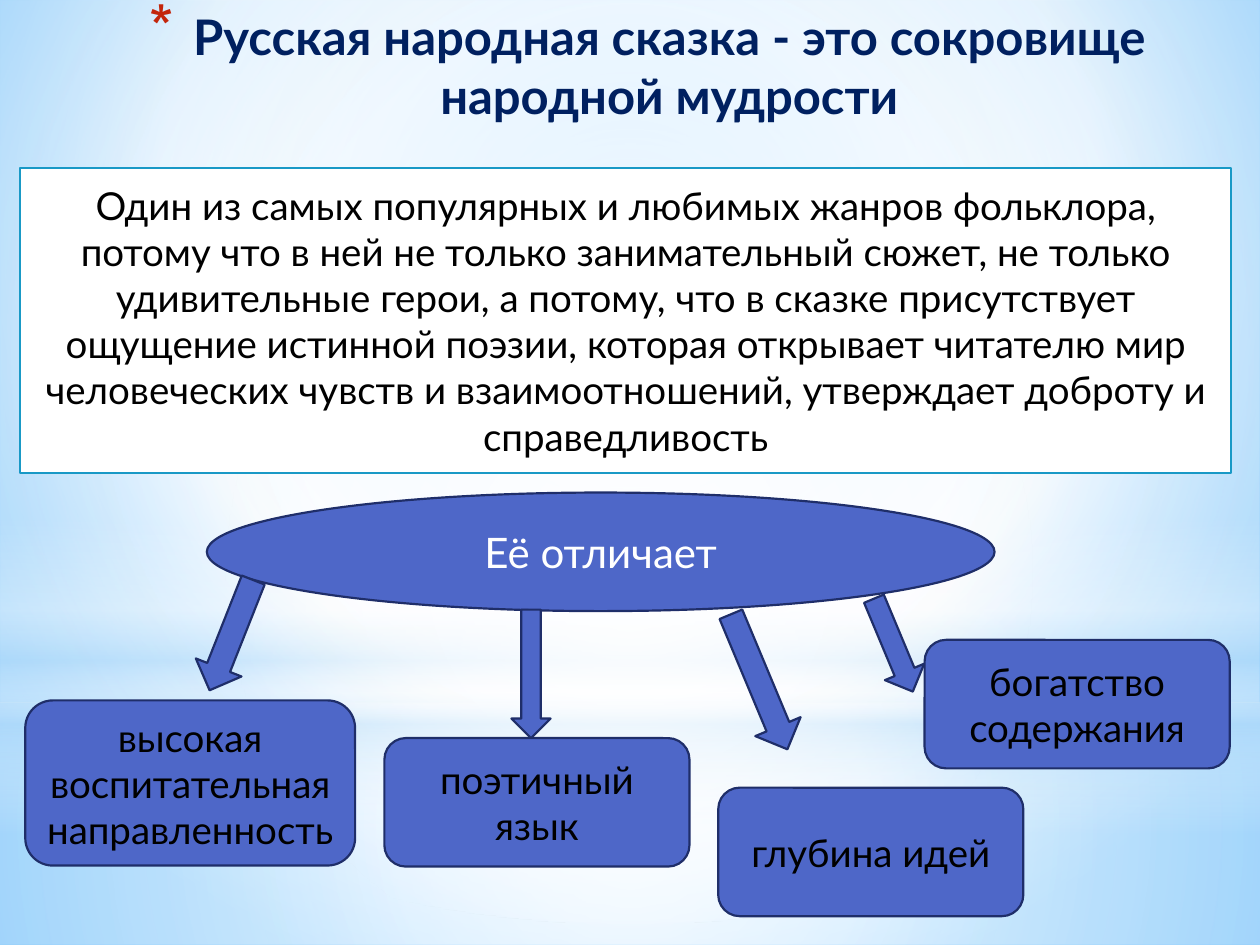
"""Build a slide about what distinguishes the Russian folk tale."""
import dataclasses

import lxml.etree
import pptx
import pptx.dml.color
import pptx.enum.shapes
import pptx.enum.text
import pptx.oxml
import pptx.oxml.ns
import pptx.util

Cm = pptx.util.Cm
SHAPE = pptx.enum.shapes.MSO_SHAPE
CENTER = (50, 50, 50, 50)


@dataclasses.dataclass(frozen=True)
class Theme:
    font: str = "Lato"
    title: str = "002060"
    star: str = "C3260C"
    accent: str = "4E67C8"
    accent_edge: str = "1F2E69"
    panel: str = "FFFFFF"
    panel_edge: str = "1999C6"
    dark: str = "000000"
    light: str = "FFFFFF"
    haze: str = "B4DCFA"
    sky: str = "9ED5FF"
    deep_sky: str = "5BB9FF"
    title_size: int = 28
    hub_size: int = 24
    body_size: int = 22
    edge_width: float = 1.25


def rgb(value):
    return pptx.dml.color.RGBColor.from_string(value)


def gradient(stops, focus=None):
    marks = "".join(
        f'<a:gs pos="{pos * 1000}"><a:srgbClr val="{color}">'
        f'<a:alpha val="{alpha * 1000}"/></a:srgbClr></a:gs>'
        for pos, color, alpha in stops)
    course = '<a:lin ang="5400000" scaled="0"/>'
    if focus:
        sides = " ".join(f'{side}="{part * 1000}"' for side, part in zip("ltrb", focus))
        course = f'<a:path path="circle"><a:fillToRect {sides}/></a:path>'
    return pptx.oxml.parse_xml(
        f'<a:gradFill {pptx.oxml.ns.nsdecls("a")} rotWithShape="1">'
        f'<a:gsLst>{marks}</a:gsLst>{course}</a:gradFill>')


def swap_fill(fill, holder, new_fill):
    fill.solid()
    solid = holder.find(pptx.oxml.ns.qn("a:solidFill"))
    holder.replace(solid, new_fill)


class SlideBuilder:
    def __init__(self, theme):
        self.theme = theme
        self.deck = pptx.Presentation()
        self.deck.slide_width, self.deck.slide_height = Cm(25.4), Cm(19.05)
        self.slide = self.deck.slides.add_slide(self.deck.slide_layouts[5])

    def background(self, stops, focus):
        fill = self.slide.background.fill
        holder = self.slide._element.find(".//" + pptx.oxml.ns.qn("p:bgPr"))
        swap_fill(fill, holder, gradient(stops, focus))

    def shape(self, kind, box):
        shape = self.slide.shapes.add_shape(kind, *map(Cm, box))
        shape.shadow.inherit = False
        return shape

    def glow(self, kind, box, stops, focus=None):
        glow = self.shape(kind, box)
        glow.line.fill.background()
        swap_fill(glow.fill, glow._element.spPr, gradient(stops, focus))

    def filled(self, kind, box, fill=None, edge=None):
        shape = self.shape(kind, box)
        shape.fill.solid()
        shape.fill.fore_color.rgb = rgb(fill or self.theme.accent)
        shape.line.color.rgb = rgb(edge or self.theme.accent_edge)
        shape.line.width = pptx.util.Pt(self.theme.edge_width)
        return shape

    def arrow(self, box, angle=0):
        self.filled(SHAPE.DOWN_ARROW, box).rotation = angle

    def set_text(self, shape, text, size, color, anchor, bold=False):
        frame = shape.text_frame
        frame.word_wrap = True
        frame.auto_size = pptx.enum.text.MSO_AUTO_SIZE.NONE
        frame.vertical_anchor = anchor
        frame.text = text
        paragraph = frame.paragraphs[0]
        paragraph.alignment = pptx.enum.text.PP_ALIGN.CENTER
        if shape.is_placeholder:
            self.star(paragraph)
        font = paragraph.font
        font.name, font.size, font.bold = self.theme.font, pptx.util.Pt(size), bold
        font.color.rgb = rgb(color)

    def star(self, paragraph):
        properties = paragraph._p.get_or_add_pPr()
        properties.set("marL", str(Cm(0.89)))
        properties.set("indent", str(-Cm(0.89)))
        qn = pptx.oxml.ns.qn
        color = lxml.etree.SubElement(properties, qn("a:buClr"))
        lxml.etree.SubElement(color, qn("a:srgbClr"), val=self.theme.star)
        lxml.etree.SubElement(properties, qn("a:buSzPct"), val="128000")
        lxml.etree.SubElement(properties, qn("a:buChar"), char="*")

    def title(self, text, box):
        title = self.slide.shapes.title
        title.left, title.top, title.width, title.height = map(Cm, box)
        self.slide.shapes._spTree.append(title._element)
        self.set_text(title, text, self.theme.title_size, self.theme.title,
                      pptx.enum.text.MSO_ANCHOR.TOP, bold=True)

    def label(self, kind, text, box, size=None, color=None, fill=None, edge=None):
        self.set_text(self.filled(kind, box, fill, edge), text,
                      size or self.theme.body_size, color or self.theme.dark,
                      pptx.enum.text.MSO_ANCHOR.MIDDLE)


def main():
    theme = Theme()
    page = SlideBuilder(theme)
    white, haze = theme.light, theme.haze

    page.background([(0, theme.sky, 100), (60, white, 100), (100, theme.deep_sky, 100)],
                    (20, 10, 20, 60))
    page.glow(SHAPE.RECTANGLE, (0, 14.17, 25.4, 4.88),
              [(0, white, 91), (37, white, 76), (100, haze, 79)], CENTER)
    page.glow(SHAPE.RECTANGLE, (0, 0, 25.4, 14.17),
              [(0, white, 89), (48, white, 62), (100, haze, 79)], CENTER)
    page.glow(SHAPE.RECTANGLE, (0, 10.46, 25.4, 6.35),
              [(0, white, 0), (29, white, 30), (45, haze, 40),
               (55, white, 26), (65, haze, 60), (100, white, 0)])
    page.glow(SHAPE.OVAL, (0, 4.45, 25.4, 14.17),
              [(0, white, 100), (56, white, 0)], CENTER)

    page.arrow((14.81, 12.27, 0.99, 2.95), 337.3)
    page.arrow((17.58, 11.99, 0.86, 2.03), 337.3)
    page.title("Русская народная сказка - это сокровище народной мудрости",
               (1.27, 0, 23.55, 3.18))
    page.label(SHAPE.RECTANGLE,
               "Один из самых популярных и любимых жанров фольклора, потому что в ней "
               "не только занимательный сюжет, не только удивительные герои, а потому, "
               "что в сказке присутствует ощущение истинной поэзии, которая открывает "
               "читателю мир человеческих чувств и взаимоотношений, утверждает доброту "
               "и справедливость",
               (0.41, 3.38, 24.41, 6.15), fill=theme.panel, edge=theme.panel_edge)
    page.label(SHAPE.OVAL, "Её отличает", (4.17, 9.93, 15.88, 2.39),
               size=theme.hub_size, color=theme.light)

    page.label(SHAPE.ROUNDED_RECTANGLE, "высокая воспитательная направленность",
               (0.51, 14.12, 6.65, 3.33))
    for quality, left, top in (("поэтичный язык", 7.75, 14.88),
                               ("богатство содержания", 18.64, 12.9),
                               ("глубина идей", 14.48, 15.88)):
        page.label(SHAPE.ROUNDED_RECTANGLE, quality, (left, top, 6.15, 2.59))
    page.arrow((10.31, 12.29, 0.79, 2.59))
    page.arrow((4.17, 11.61, 0.99, 2.39), 21.6)

    page.deck.save("out.pptx")


if __name__ == "__main__":
    main()
